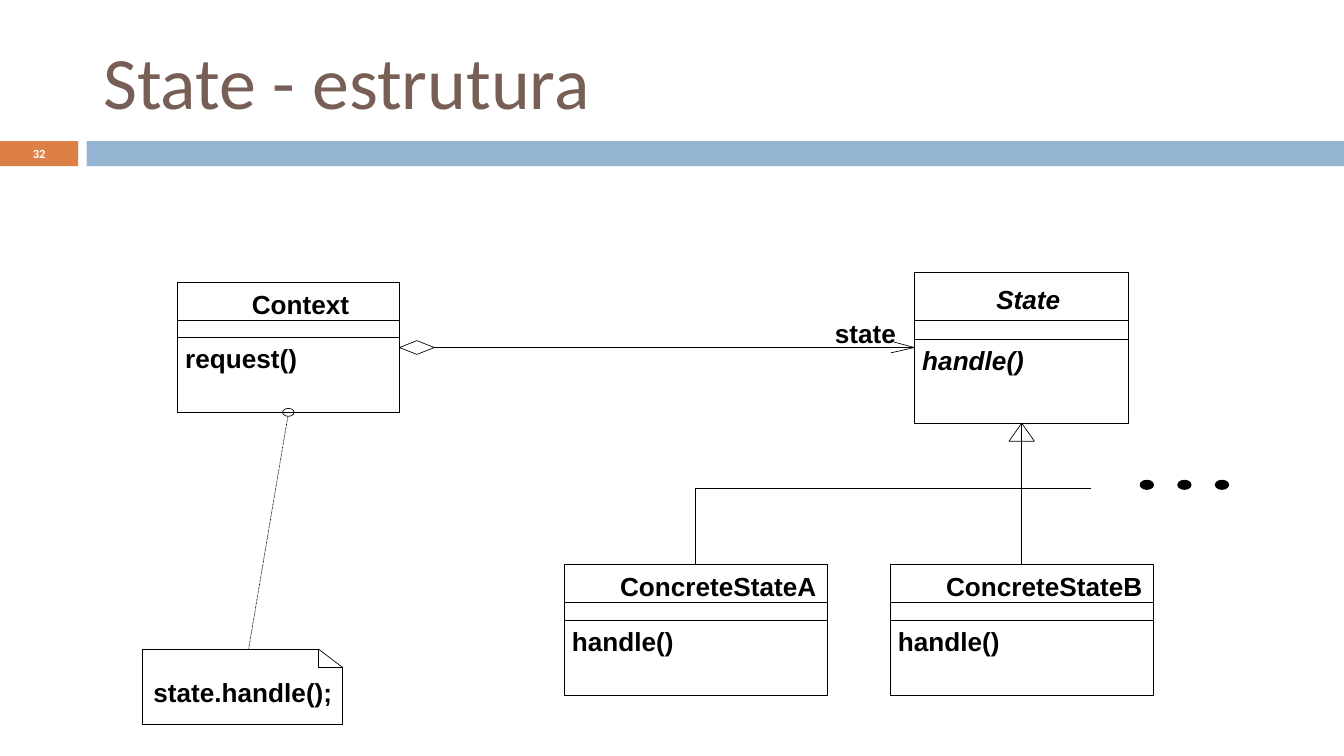
import dataclasses

import lxml.etree
import pptx
import pptx.dml.color
import pptx.enum.dml
import pptx.enum.shapes
import pptx.enum.text
import pptx.oxml.ns
import pptx.util

Cm = pptx.util.Cm
Pt = pptx.util.Pt
MSO = pptx.enum.shapes.MSO_SHAPE
ALIGN = pptx.enum.text.PP_ALIGN
ANCHOR = pptx.enum.text.MSO_ANCHOR


@dataclasses.dataclass(frozen=True)
class Theme:
    title: str = "775F55"
    accent: str = "DD8047"
    band: str = "94B6D2"
    ink: str = "000000"
    paper: str = "FFFFFF"
    heading_font: str = "Calibri"
    body_font: str = "Arial"
    title_size: float = 39.6
    number_size: float = 6.7
    body_size: float = 14
    thin: float = 0.37
    thick: float = 1.13


T = Theme()


def rgb(color):
    return pptx.dml.color.RGBColor.from_string(color)


def style(sp, fill=None, line=T.ink, width=T.thin):
    sp.shadow.inherit = False
    if fill:
        sp.fill.solid()
        sp.fill.fore_color.rgb = rgb(fill)
    else:
        sp.fill.background()
    if line:
        sp.line.color.rgb = rgb(line)
        sp.line.width = Pt(width)
    else:
        sp.line.fill.background()
    return sp


def add_preset(s, kind, x, y, w, h, **fmt):
    return style(s.shapes.add_shape(kind, Cm(x), Cm(y), Cm(w), Cm(h)), **fmt)


def add_text(s, text, x, y, w, h=0.61, size=T.body_size, font=T.body_font, color=T.ink,
             bold=True, italic=False, align=ALIGN.LEFT, anchor=ANCHOR.TOP, inset=0, wrap=False):
    sp = s.shapes.add_textbox(Cm(x), Cm(y), Cm(w), Cm(h))
    tf = sp.text_frame
    tf.word_wrap = wrap
    tf.vertical_anchor = anchor
    tf.margin_left = tf.margin_right = Cm(inset)
    tf.margin_top = tf.margin_bottom = Cm(inset / 2)
    p = tf.paragraphs[0]
    p.alignment = align
    r = p.add_run()
    r.text = text
    r.font.name = font
    r.font.size = Pt(size)
    r.font.bold = bold
    r.font.italic = italic
    r.font.color.rgb = rgb(color)


def add_line(s, x1, y1, x2, y2, dotted=False):
    c = s.shapes.add_connector(pptx.enum.shapes.MSO_CONNECTOR.STRAIGHT,
                               Cm(x1), Cm(y1), Cm(x2), Cm(y2))
    c.line.color.rgb = rgb(T.ink)
    c.line.width = Pt(T.thin)
    if dotted:
        c.line.dash_style = pptx.enum.dml.MSO_LINE.ROUND_DOT
    lxml.etree.SubElement(c._element.spPr, pptx.oxml.ns.qn("a:effectLst"))


def add_path(s, *contours, closed=False, fill=None):
    contours = [[(Cm(x), Cm(y)) for x, y in points] for points in contours]
    fb = s.shapes.build_freeform(*contours[0][0])
    for i, points in enumerate(contours):
        if i:
            fb.move_to(*points[0])
        fb.add_line_segments(points[1:], close=closed)
    return style(fb.convert_to_shape(), fill=fill)


def add_class(s, name, operation, x, y, w, heights, name_at, name_w, op_w, italic=False):
    top = y
    for h in heights:
        add_preset(s, MSO.RECTANGLE, x, top, w, h, fill=T.paper)
        top += h
    dx, dy = name_at
    add_text(s, name, x + dx, y + dy, name_w, italic=italic)
    add_text(s, operation, x + 0.15, top - heights[-1] + 0.1, op_w, italic=italic)


def add_header(s):
    add_preset(s, MSO.RECTANGLE, 0, 2.67, 1.48, 0.47, fill=T.accent, line=None)
    add_preset(s, MSO.RECTANGLE, 1.64, 2.67, 23.76, 0.47, fill=T.band, line=None)
    add_text(s, "32", 0, 2.64, 1.48, 0.51, size=T.number_size, font=T.heading_font,
             color=T.paper, align=ALIGN.CENTER, anchor=ANCHOR.MIDDLE, wrap=True)
    add_text(s, "State - estrutura", 1.7, 0.48, 22.66, 2.06, size=T.title_size,
             font=T.heading_font, color=T.title, bold=False, anchor=ANCHOR.MIDDLE,
             inset=0.25, wrap=True)


def add_note(s):
    add_line(s, 4.7, 12.26, 5.44, 7.87, dotted=True)
    add_preset(s, MSO.OVAL, 5.34, 7.72, 0.22, 0.15)
    left, fold, right = 2.69, 6.02, 6.48
    top, crease, bottom = 12.27, 12.62, 13.69
    add_path(s,
             [(right, crease), (fold, top), (fold, crease)],
             [(right, crease), (fold, crease), (fold, top), (left, top),
              (left, bottom), (right, bottom)],
             closed=True, fill=T.paper)
    add_text(s, "state.handle();", 2.9, 12.78, 3.55)


def add_aggregation(s):
    y = 6.57
    add_text(s, "state", 15.78, 6, 1.25)
    add_line(s, 8.18, y, 17.28, y)
    add_preset(s, MSO.DIAMOND, 7.55, y - 0.13, 0.66, 0.26)
    add_path(s, [(16.84, y + 0.1), (17.28, y), (16.84, y - 0.12)])


def add_inheritance(s):
    x, top, bus, bottom = 19.31, 8, 9.23, 10.67
    add_preset(s, MSO.ISOSCELES_TRIANGLE, x - 0.24, top, 0.48, 0.34, fill=T.paper)
    add_line(s, x, top, x, bottom)
    add_path(s, [(x, bus), (13.15, bus), (13.15, bottom)])
    add_line(s, x, bus, 20.61, bus)
    for i in range(3):
        add_preset(s, MSO.OVAL, 21.56 + 0.71 * i, 9.09, 0.23, 0.15, fill=T.ink, width=T.thick)


def main():
    prs = pptx.Presentation()
    prs.slide_width, prs.slide_height = Cm(25.4), Cm(14.29)
    s = prs.slides.add_slide(prs.slide_layouts[6])
    add_header(s)
    add_class(s, "Context", "request()", 3.35, 5.33, 4.19, (0.72, 0.33, 1.42),
              (1.41, 0.13), 1.95, 2.25)
    add_note(s)
    add_class(s, "State", "handle()", 17.28, 5.15, 4.04, (0.9, 0.36, 1.59),
              (1.55, 0.21), 1.3, 2.05, italic=True)
    add_aggregation(s)
    for name, x in (("ConcreteStateA", 10.66), ("ConcreteStateB", 16.82)):
        add_class(s, name, "handle()", x, 10.67, 4.98, (0.71, 0.35, 1.41),
                  (1.06, 0.11), 3.85, 2.05)
    add_inheritance(s)
    prs.save("out.pptx")


if __name__ == "__main__":
    main()
